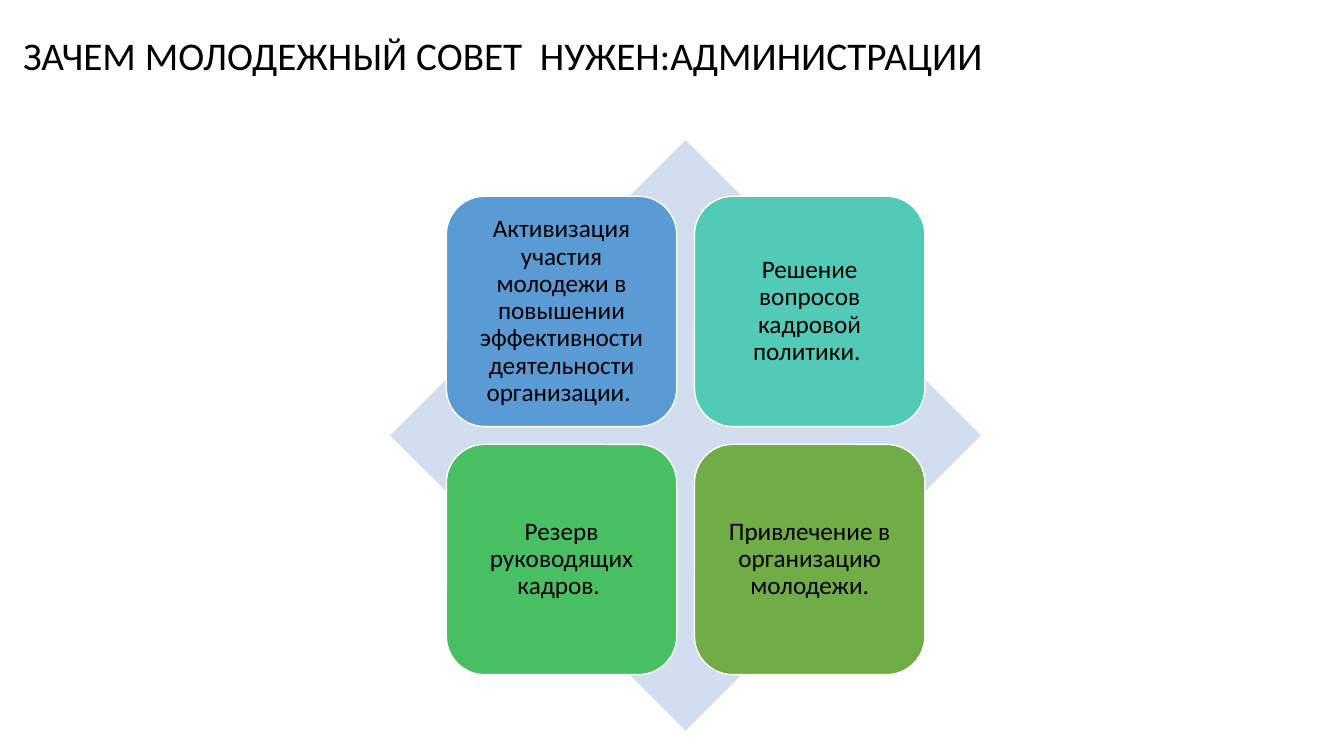
from pptx import Presentation
from pptx import util as u
from pptx.dml.color import RGBColor
from pptx.enum import shapes, text

BLACK = RGBColor(0x00, 0x00, 0x00)
WHITE = RGBColor(0xFF, 0xFF, 0xFF)
PALE = RGBColor(0xD2, 0xDE, 0xEF)
BLUE = RGBColor(0x5B, 0x9B, 0xD5)
TEAL = RGBColor(0x52, 0xCA, 0xB8)
GREEN = RGBColor(0x49, 0xBF, 0x64)
OLIVE = RGBColor(0x70, 0xAD, 0x47)

FONT = "Calibri"
TITLE = "ЗАЧЕМ МОЛОДЕЖНЫЙ СОВЕТ  НУЖЕН:АДМИНИСТРАЦИИ"
GOALS = [
    ("Активизация участия молодежи в повышении эффективности "
     "деятельности организации. ", BLUE),
    ("Решение вопросов кадровой политики. ", TEAL),
    ("Резерв руководящих кадров. ", GREEN),
    ("Привлечение в организацию молодежи.", OLIVE),
]

LEFT, TOP, SPAN = 3.87, 1.39, 5.86
SIDE = SPAN * 0.39
STEP = SPAN * 0.42
EDGE = (SPAN - SIDE - STEP) / 2


def write(frame, words, size, align):
    frame.text = words
    frame.word_wrap = True
    frame.auto_size = text.MSO_AUTO_SIZE.NONE
    frame.vertical_anchor = text.MSO_ANCHOR.MIDDLE
    para = frame.paragraphs[0]
    para.alignment = align
    para.line_spacing = 0.9
    font = para.runs[0].font
    font.name = FONT
    font.size = u.Pt(size)
    font.color.rgb = BLACK


def add_title(slide):
    title = slide.shapes.title
    title.left, title.top = u.Inches(0.13), 0
    title.width, title.height = u.Inches(11.5), u.Inches(1.57)
    write(title.text_frame, TITLE, 28, text.PP_ALIGN.LEFT)
    title.text_frame.margin_bottom = u.Inches(0.47)


def add_square(slide, kind, left, top, side, fill):
    box = slide.shapes.add_shape(
        kind, *(u.Inches(size) for size in (left, top, side, side)))
    box.shadow.inherit = False
    box.fill.solid()
    box.fill.fore_color.rgb = fill
    box.line.fill.background()
    return box


def add_goal(slide, index, words, fill):
    row, col = divmod(index, 2)
    box = add_square(slide, shapes.MSO_SHAPE.ROUNDED_RECTANGLE,
                     LEFT + EDGE + col * STEP, TOP + EDGE + row * STEP,
                     SIDE, fill)
    box.line.color.rgb = WHITE
    box.line.width = u.Pt(1)
    frame = box.text_frame
    frame.margin_left = frame.margin_right = u.Inches(0.07)
    frame.margin_top = frame.margin_bottom = u.Inches(0.07)
    write(frame, words, 18, text.PP_ALIGN.CENTER)


def main():
    deck = Presentation()
    deck.slide_width = u.Inches(13.33)
    deck.slide_height = u.Inches(7.5)
    slide = deck.slides.add_slide(deck.slide_layouts[5])
    add_title(slide)
    add_square(slide, shapes.MSO_SHAPE.DIAMOND, LEFT, TOP, SPAN, PALE)
    for index, (words, fill) in enumerate(GOALS):
        add_goal(slide, index, words, fill)
    deck.save("out.pptx")


if __name__ == "__main__":
    main()
